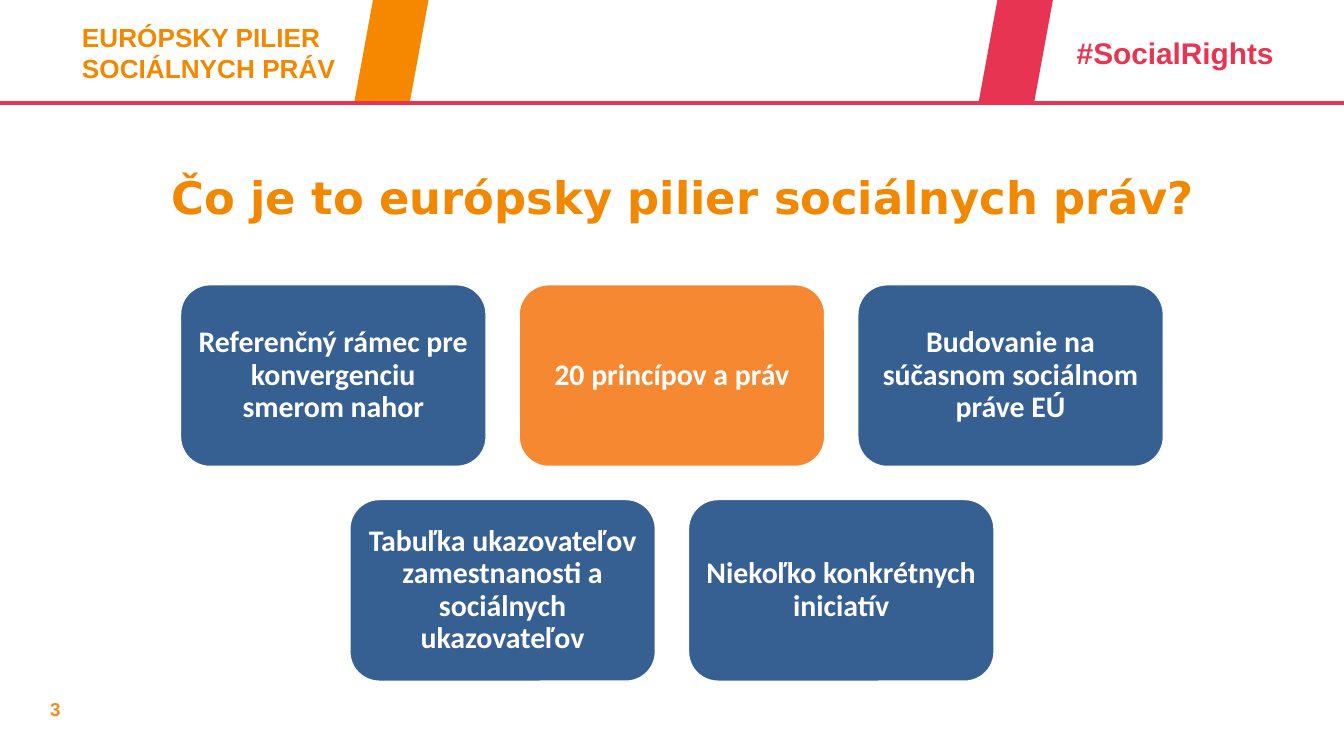
"""Builds the slide that introduces the European pillar of social rights."""
from dataclasses import dataclass

from lxml import etree
from pptx import Presentation
from pptx.dml.color import RGBColor
from pptx.enum.shapes import MSO_CONNECTOR, MSO_SHAPE
from pptx.enum.text import MSO_ANCHOR, PP_ALIGN
from pptx.oxml.ns import qn
from pptx.util import Cm, Pt

LEFT, CENTER = PP_ALIGN.LEFT, PP_ALIGN.CENTER
TOP, MIDDLE = MSO_ANCHOR.TOP, MSO_ANCHOR.MIDDLE
ROUNDED, SLANTED = MSO_SHAPE.ROUNDED_RECTANGLE, MSO_SHAPE.PARALLELOGRAM
STRAIGHT = MSO_CONNECTOR.STRAIGHT

PAGE_WIDTH, PAGE_HEIGHT = 25.4, 14.29
CARD_WIDTH, CARD_HEIGHT, CARD_GAP = 5.82, 3.48, 0.58
CARDS_TOP = 5.36
CARD_ROWS = [
    [
        ("Referenčný rámec pre konvergenciu smerom nahor", "blue"),
        ("20 princípov a práv", "card_orange"),
        ("Budovanie na súčasnom sociálnom práve EÚ", "blue"),
    ],
    [
        ("Tabuľka ukazovateľov zamestnanosti a sociálnych ukazovateľov", "blue"),
        ("Niekoľko konkrétnych iniciatív", "blue"),
    ],
]


@dataclass(frozen=True)
class Theme:
    orange: str = "F18800"
    band_orange: str = "F68800"
    card_orange: str = "F68831"
    number_orange: str = "F68B20"
    red: str = "E73452"
    blue: str = "376092"
    white: str = "FFFFFF"
    header_font: str = "Arial"
    title_font: str = "DejaVu Sans"
    card_font: str = "Calibri"
    number_size: int = 10
    header_size: int = 14
    body_size: int = 16
    title_size: int = 24


class Painter:
    def __init__(self, page, theme):
        self.page = page
        self.theme = theme

    def color(self, name):
        return RGBColor.from_string(getattr(self.theme, name))

    def fill_text(self, frame, lines, font, size, color, align, anchor):
        frame.word_wrap = True
        frame.vertical_anchor = anchor
        para = frame.paragraphs[0]
        para.alignment = align
        for index, line in enumerate(lines):
            if index:
                para.add_line_break()
            span = para.add_run()
            span.text = line
            span.font.name = font
            span.font.size = Pt(size)
            span.font.bold = True
            span.font.color.rgb = self.color(color)
        return para

    def text(self, place, lines, size, color, font=None, align=LEFT, anchor=TOP):
        box = self.page.shapes.add_textbox(*map(Cm, place))
        self.fill_text(box.text_frame, lines, font or self.theme.header_font,
                       size, color, align, anchor)

    def shape(self, kind, place, fill):
        shape = self.page.shapes.add_shape(kind, *map(Cm, place))
        shape.shadow.inherit = False
        shape.fill.solid()
        shape.fill.fore_color.rgb = self.color(fill)
        shape.line.fill.background()
        return shape

    def band(self, left, fill):
        self.shape(SLANTED, (left, 0, 1.4, 1.91), fill)

    def rule(self, top, color, width):
        rule = self.page.shapes.add_connector(
            STRAIGHT, Cm(0), Cm(top), Cm(PAGE_WIDTH), Cm(top))
        rule.line.color.rgb = self.color(color)
        rule.line.width = Pt(width)
        etree.SubElement(rule._element.spPr, qn("a:effectLst"))

    def card(self, left, top, label, fill):
        card = self.shape(ROUNDED, (left, top, CARD_WIDTH, CARD_HEIGHT), fill)
        card.line.color.rgb = self.color("white")
        card.line.width = Pt(2)
        frame = card.text_frame
        frame.margin_left = frame.margin_right = Cm(0.18)
        frame.margin_top = frame.margin_bottom = Cm(0.18)
        para = self.fill_text(frame, [label], self.theme.card_font,
                              self.theme.body_size, "white", CENTER, MIDDLE)
        para.line_spacing = 0.9

    def card_row(self, top, cards):
        pitch = CARD_WIDTH + CARD_GAP
        start = (PAGE_WIDTH - len(cards) * pitch + CARD_GAP) / 2
        for column, (label, fill) in enumerate(cards):
            self.card(start + column * pitch, top, label, fill)


def main():
    deck = Presentation()
    deck.slide_width, deck.slide_height = Cm(PAGE_WIDTH), Cm(PAGE_HEIGHT)
    theme = Theme()
    painter = Painter(deck.slides.add_slide(deck.slide_layouts[6]), theme)

    painter.text((0.7, 13.06, 5.54, 0.68), ["3"], theme.number_size, "number_orange")
    painter.text((1.3, 0.28, 6.45, 1.45), ["EURÓPSKY PILIER", "SOCIÁLNYCH PRÁV"],
                 theme.header_size, "orange")
    painter.rule(1.95, "red", 2.25)
    painter.text((20.1, 0.53, 4.8, 0.94), ["#SocialRights"], theme.body_size, "red")
    painter.band(6.7, "band_orange")
    painter.band(18.5, "red")
    painter.text((0.4, 2.74, 25, 1.96), ["Čo je to európsky pilier sociálnych práv?"],
                 theme.title_size, "orange", theme.title_font, CENTER, MIDDLE)
    for row, cards in enumerate(CARD_ROWS):
        painter.card_row(CARDS_TOP + row * (CARD_HEIGHT + CARD_GAP), cards)

    deck.save("out.pptx")


if __name__ == "__main__":
    main()
